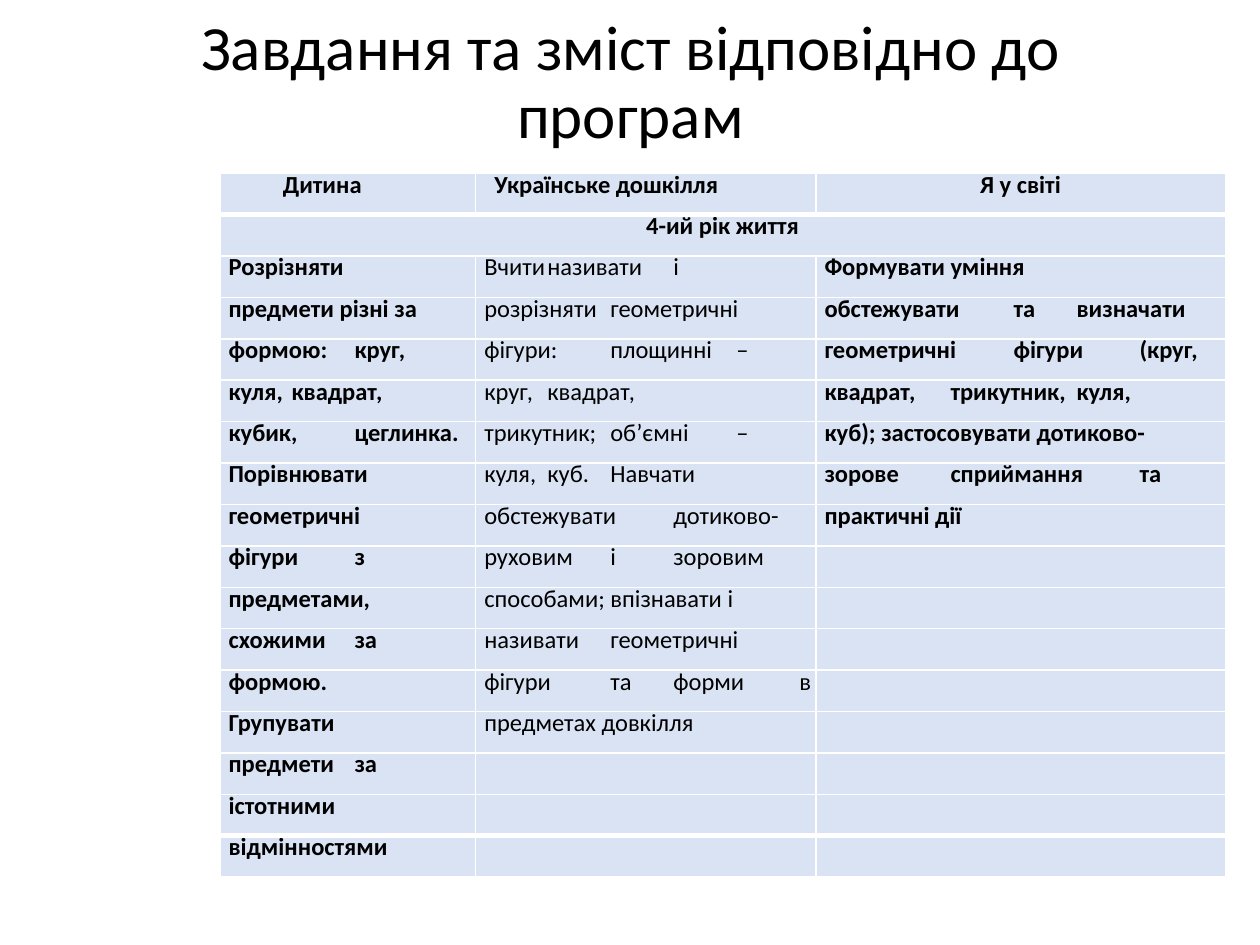
import pptx
import pptx.dml.color
import pptx.enum.text
import pptx.util
from dataclasses import dataclass
from lxml import etree
from pptx.oxml.ns import qn

Pt = pptx.util.Pt
RGB = pptx.dml.color.RGBColor
ALIGN = pptx.enum.text.PP_ALIGN
ANCHOR = pptx.enum.text.MSO_ANCHOR


@dataclass(frozen=True)
class Theme:
    font: str = "Calibri"
    text: str = "000000"
    fill: str = "DAE3F3"
    rule: str = "FFFFFF"
    title_size: float = 36
    cell_size: float = 14
    leading: float = 15.1
    thin: float = 1
    thick: float = 3


THEME = Theme()

# Heading: text, alignment, indent
PROGRAMMES = [("Дитина", ALIGN.LEFT, 36), ("Українське дошкілля", ALIGN.LEFT, 10.8),
              ("Я у світі", ALIGN.CENTER, 68.4)]
YEAR = "4-ий рік життя"

# One list per programme: each line is its text followed by its tab stops
CHILD = [
    ("Розрізняти",), ("предмети різні за",), ("формою:\tкруг,", 84.2),
    ("куля,\tквадрат,", 64.8), ("кубик,\tцеглинка.", 56.2), ("Порівнювати",),
    ("геометричні",), ("фігури\tз", 108.7), ("предметами,",),
    ("схожими\tза", 102.2), ("формою.",), ("Групувати",),
    ("предмети\tза", 102.2), ("істотними",), ("відмінностями",),
]
PRESCHOOL = [
    ("Вчити\tназивати\tі", 69.8, 149.8), ("розрізняти\tгеометричні", 80.6),
    ("фігури:\tплощинні\t–", 68.4, 146.2), ("круг,\tквадрат,", 103.7),
    ("трикутник;\tоб’ємні\t–", 86.4, 146.2), ("куля,\tкуб.\tНавчати", 57.6, 103.7),
    ("обстежувати\tдотиково-", 93.6), ("руховим\tі\tзоровим", 78.5, 104.4),
    ("способами; впізнавати і",), ("називати\tгеометричні", 80.6),
    ("фігури\tта\tформи\tв", 61.9, 90.7, 146.9), ("предметах довкілля",),
]
WORLD = [
    ("Формувати\tуміння", 144.7), ("обстежувати\tта\tвизначати", 97.2, 126),
    ("геометричні\tфігури\t(круг,", 95, 151.2),
    ("квадрат,\tтрикутник,\tкуля,", 72, 155.5), ("куб); застосовувати дотиково-",),
    ("зорове\tсприймання\tта", 73.4, 173.5), ("практичні дії",),
]


def style_run(r, size, bold=False):
    r.font.name = THEME.font
    r.font.size = Pt(size)
    r.font.bold = bold
    r.font.color.rgb = RGB.from_string(THEME.text)


def add_title(s, x, y, w, h):
    tf = s.shapes.add_textbox(Pt(x), Pt(y), Pt(w), Pt(h)).text_frame
    tf.word_wrap = True
    tf.vertical_anchor = ANCHOR.MIDDLE
    p = tf.paragraphs[0]
    p.text = "Завдання та зміст відповідно до програм"
    p.alignment = ALIGN.CENTER
    p.line_spacing = 0.9
    style_run(p.runs[0], THEME.title_size)


def style_cell(cell, top, bottom):
    cell.margin_left = cell.margin_right = cell.margin_top = cell.margin_bottom = 0
    tcPr = cell._tc.get_or_add_tcPr()
    widths = {"a:lnL": THEME.thin, "a:lnR": THEME.thin, "a:lnT": top, "a:lnB": bottom}
    for tag, width in widths.items():
        ln = etree.SubElement(tcPr, qn(tag), w=str(Pt(width)))
        solid = etree.SubElement(ln, qn("a:solidFill"))
        etree.SubElement(solid, qn("a:srgbClr"), val=THEME.rule)
    cell.fill.solid()
    cell.fill.fore_color.rgb = RGB.from_string(THEME.fill)


def write_cell(cell, text, tabs=(), indent=5, align=ALIGN.LEFT, bold=True):
    p = cell.text_frame.paragraphs[0]
    p.text = text
    pPr = p._p.get_or_add_pPr()
    pPr.set("marL", str(Pt(indent)))
    pPr.set("indent", "0")
    if align == ALIGN.CENTER:
        pPr.set("marR", str(Pt(indent)))
    if tabs:
        tab_list = etree.SubElement(pPr, qn("a:tabLst"))
        for pos in tabs:
            etree.SubElement(tab_list, qn("a:tab"), pos=str(Pt(pos)), algn="l")
    p.alignment = align
    p.line_spacing = Pt(THEME.leading)
    style_run(p.runs[0], THEME.cell_size, bold)


def add_programme_table(s, x, y, w, h):
    n_rows = len(CHILD) + 2
    table = s.shapes.add_table(n_rows, 3, Pt(x), Pt(y), Pt(w), Pt(h)).table
    table.horz_banding = False
    shares = (2.03, 2.7, 3.25)
    for col, share in zip(table.columns, shares):
        col.width = Pt(w * share / sum(shares))
    for row in table.rows:
        row.height = Pt(h / n_rows)

    # Thick rules under the heading and above the last row
    thick_rules = (1, n_rows - 1)
    for i in range(n_rows):
        top, bottom = (THEME.thick if k in thick_rules else THEME.thin for k in (i, i + 1))
        for j in range(3):
            style_cell(table.cell(i, j), top, bottom)

    # Heading and year rows
    for j, (text, align, indent) in enumerate(PROGRAMMES):
        write_cell(table.cell(0, j), text, indent=indent, align=align)
    table.cell(1, 0).merge(table.cell(1, 2))
    write_cell(table.cell(1, 0), YEAR, indent=152, align=ALIGN.CENTER)

    # Body lines
    for j, lines in enumerate((CHILD, PRESCHOOL, WORLD)):
        for i, (text, *tabs) in enumerate(lines, start=2):
            write_cell(table.cell(i, j), text, tabs, bold=lines is not PRESCHOOL)


def main():
    prs = pptx.Presentation()
    prs.slide_width, prs.slide_height = Pt(720), Pt(540)
    s = prs.slides.add_slide(prs.slide_layouts[6])
    add_title(s, 51.8, 9.4, 617, 77)
    add_programme_table(s, 125.6, 98.9, 574.6, 402.5)
    prs.save("out.pptx")


if __name__ == "__main__":
    main()
